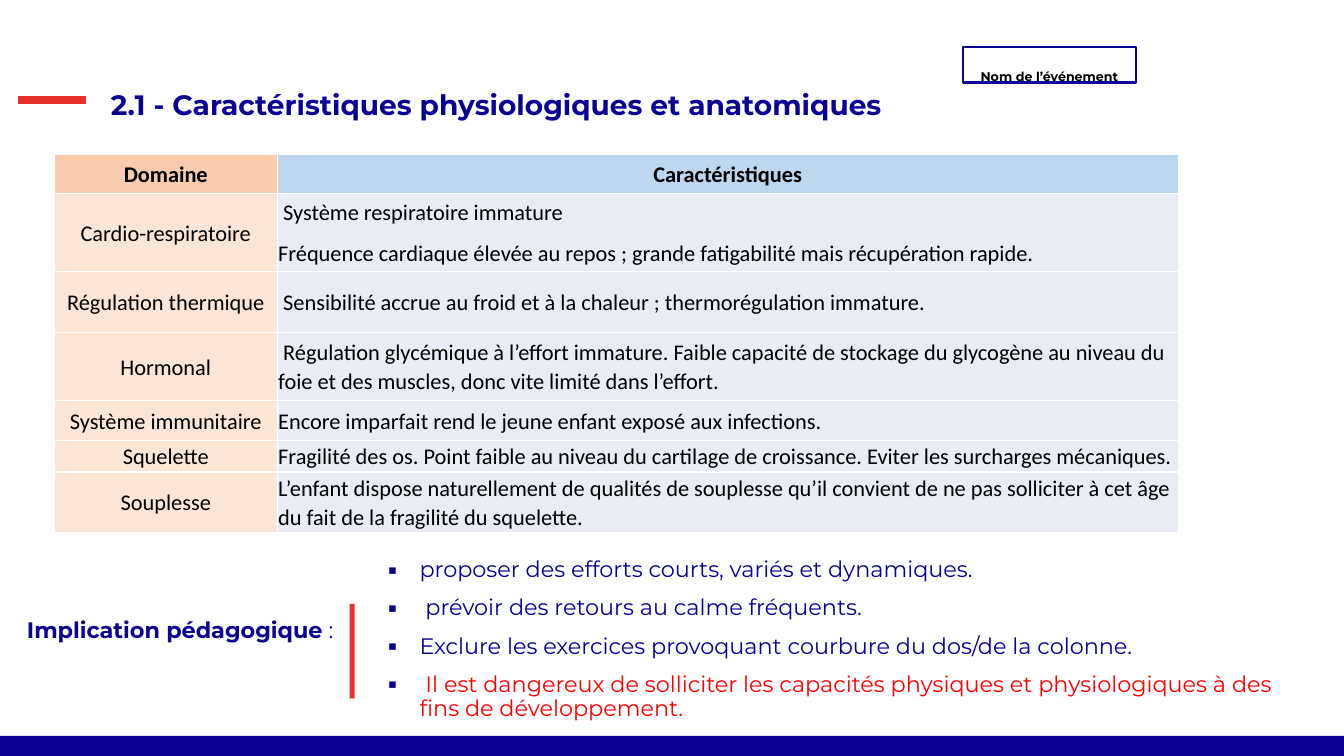
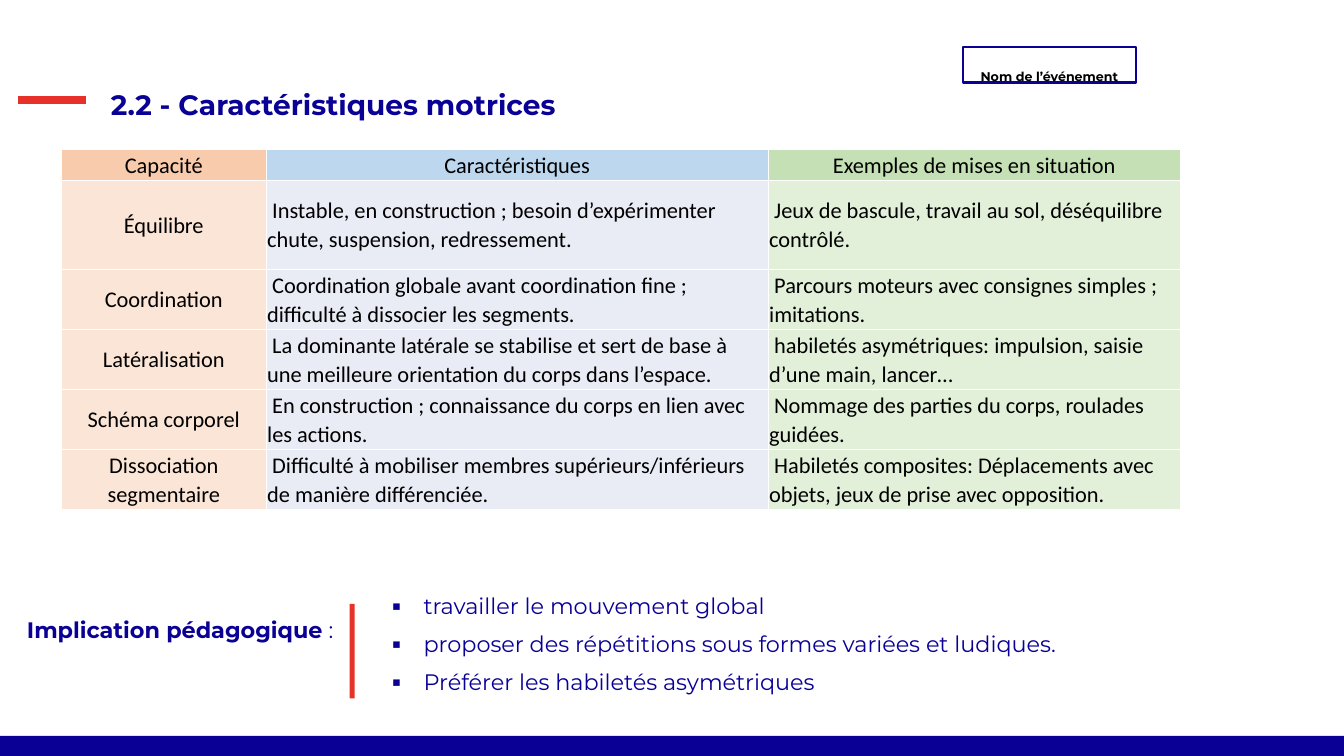
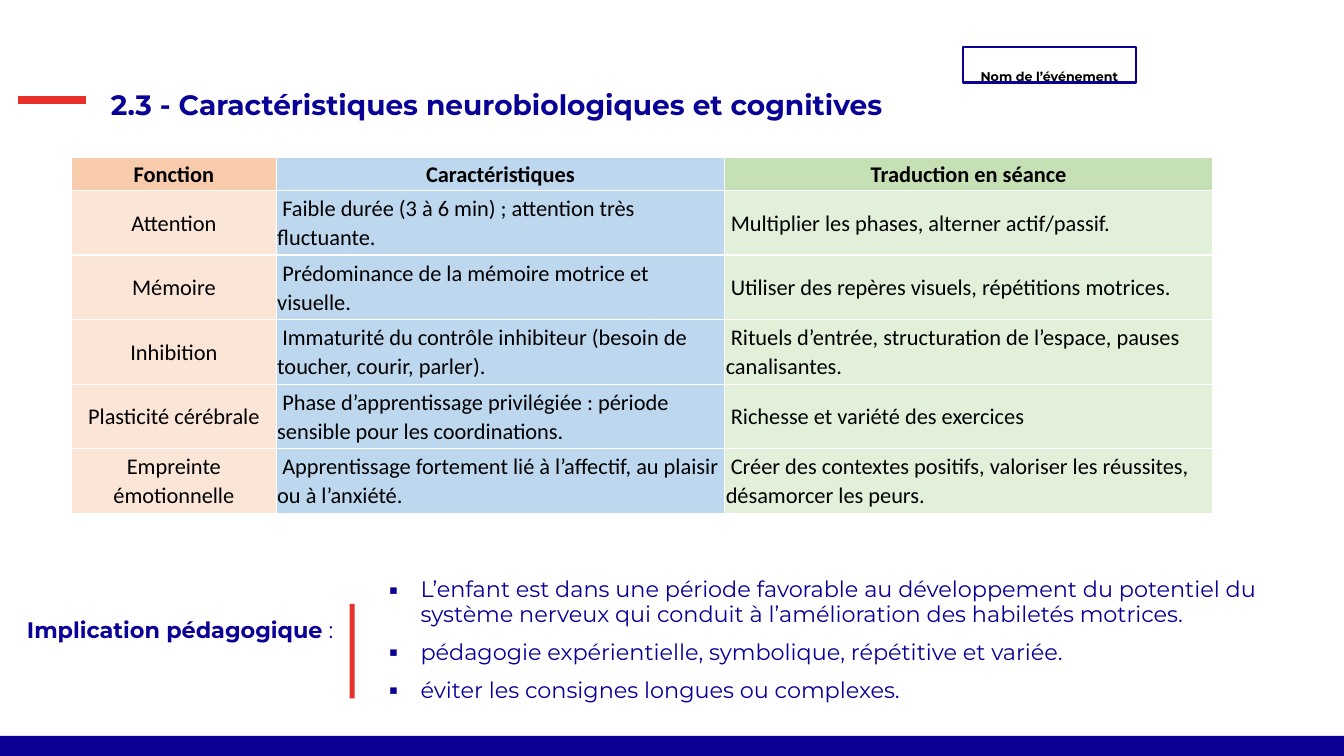
from dataclasses import dataclass
from itertools import product

from lxml import etree
from pptx import Presentation
from pptx.dml.color import RGBColor
from pptx.enum import shapes, text
from pptx.oxml import ns
from pptx.util import Pt


@dataclass(frozen=True)
class Theme:
    navy: str = "0A0096"
    title_navy: str = "090095"
    red: str = "E6332A"
    dash_red: str = "E7302A"
    alert: str = "FF0000"
    black: str = "000000"
    white: str = "FFFFFF"
    header_fills: tuple = ("F8CBAD", "BDD7EE", "C5E0B4")
    body_fills: tuple = ("FBE5D6", "E9EBF5", "E2F0D9")
    heading_font: str = "Montserrat"
    table_font: str = "Calibri"
    title_size: int = 20
    text_size: int = 16
    tag_size: int = 9


THEME = Theme()


def font_style(name, size, color, bold=False):
    return {"name": name, "size": Pt(size), "bold": bold, "color": color}


TITLE = font_style(THEME.heading_font, THEME.title_size, THEME.title_navy, True)
TEXT = font_style(THEME.heading_font, THEME.text_size, THEME.navy)
STRONG = {**TEXT, "bold": True}
ALERT = {**TEXT, "color": THEME.alert}
TAG = font_style(THEME.heading_font, THEME.tag_size, THEME.black, True)
CELL = font_style(THEME.table_font, THEME.text_size, THEME.black)
CELL_HEAD = {**CELL, "bold": True}

TIGHT = {"line_spacing": 0.9, "alignment": text.PP_ALIGN.LEFT}
CELL_LEFT = {"line_spacing": 1.06, "space_after": Pt(8)}
CELL_CENTER = {**CELL_LEFT, "alignment": text.PP_ALIGN.CENTER}
TAG_PARA = {"line_spacing": 2.5, "space_after": Pt(8), "alignment": text.PP_ALIGN.CENTER}

TOP_FRAME = {"word_wrap": True, "auto_size": text.MSO_AUTO_SIZE.NONE,
             "vertical_anchor": text.MSO_ANCHOR.TOP}
MARGINS = ("margin_left", "margin_top", "margin_right", "margin_bottom")


def rgb(value):
    return RGBColor.from_string(value)


def apply(target, values):
    for name, value in values.items():
        setattr(target, name, value)


def place(shape, box):
    apply(shape, dict(zip(("left", "top", "width", "height"), map(Pt, box))))


def write(frame, lines, para_format, gap=0):
    """Fill a frame; each line is a list of (text, font style) spans."""
    for index, spans in enumerate(lines):
        para = frame.paragraphs[0] if index == 0 else frame.add_paragraph()
        apply(para, para_format)
        para.space_before = Pt(gap if index else 0)
        for content, style in spans:
            span = para.add_run()
            span.text = content
            apply(span.font, {k: v for k, v in style.items() if k != "color"})
            span.font.color.rgb = rgb(style["color"])


def add_bullet(para, indent):
    props = para._p.get_or_add_pPr()
    props.set("marL", str(Pt(indent)))
    props.set("indent", str(-Pt(indent)))
    etree.SubElement(props, ns.qn("a:buFont")).set("typeface", THEME.heading_font)
    etree.SubElement(props, ns.qn("a:buChar")).set("char", "▪")


def add_rect(page, box, fill=None, line=None):
    rect = page.shapes.add_shape(shapes.MSO_SHAPE.RECTANGLE, *map(Pt, box))
    rect.shadow.inherit = False
    for part, color in ((rect.fill, fill), (rect.line.fill, line)):
        if color:
            part.solid()
            part.fore_color.rgb = rgb(color)
        else:
            part.background()
    return rect


def add_frame(page):
    """Draw what every slide shares: band, event tag, title dash, separator."""
    add_rect(page, (0, 525.6, 960, 14.4), fill=THEME.navy)
    add_rect(page, (249.8, 431.3, 3.6, 67.7), fill=THEME.red)

    tag = add_rect(page, (687.6, 33.8, 123.8, 25.2), line=THEME.navy)
    tag.line.width = Pt(1.5)
    apply(tag.text_frame, {**dict.fromkeys(MARGINS, 0), "word_wrap": True,
                           "vertical_anchor": text.MSO_ANCHOR.MIDDLE})
    write(tag.text_frame, [[("Nom de l’événement", TAG)]], TAG_PARA)

    dash = page.shapes.add_connector(
        shapes.MSO_CONNECTOR.STRAIGHT, Pt(13), Pt(71.3), Pt(61.2), Pt(71.3))
    dash.line.color.rgb = rgb(THEME.dash_red)
    dash.line.width = Pt(6)
    etree.SubElement(dash._element.spPr, ns.qn("a:effectLst"))


def add_title(page, title):
    place(page.shapes.title, (72, 61.9, 635, 35.3))
    frame = page.shapes.title.text_frame
    apply(frame, TOP_FRAME)
    write(frame, [[(title, TITLE)]], TIGHT)


def add_implications(page, box, lines):
    label = page.shapes.add_textbox(*map(Pt, (12.2, 438.5, 236.9, 35.3)))
    apply(label.text_frame, TOP_FRAME)
    write(label.text_frame, [[("Implication pédagogique", STRONG), (" :", TEXT)]], TIGHT)

    body = page.placeholders[1]
    place(body, box)
    apply(body.text_frame, TOP_FRAME)
    write(body.text_frame, lines, TIGHT, gap=10)
    for para in body.text_frame.paragraphs:
        add_bullet(para, 22.5)


def add_borders(cell):
    props = cell._tc.get_or_add_tcPr()
    for side in ("lnL", "lnR", "lnT", "lnB"):
        line = etree.SubElement(props, ns.qn(f"a:{side}"), w=str(Pt(1)))
        fill = etree.SubElement(line, ns.qn("a:solidFill"))
        etree.SubElement(fill, ns.qn("a:srgbClr"), val=THEME.white)


def add_grid(page, origin, widths, heights, rows, head_style, body_fills):
    size = (sum(widths), sum(heights))
    grid = page.shapes.add_table(len(rows), len(widths), *map(Pt, origin + size)).table
    apply(grid, {"first_row": False, "horz_banding": False})
    for column, width in zip(grid.columns, widths):
        column.width = Pt(width)
    for row, height in zip(grid.rows, heights):
        row.height = Pt(height)
    for r, c in product(range(len(rows)), range(len(widths))):
        cell = grid.cell(r, c)
        add_borders(cell)
        cell.fill.solid()
        cell.fill.fore_color.rgb = rgb((body_fills if r else THEME.header_fills)[c])
        apply(cell, {**dict.fromkeys(MARGINS, Pt(0.75)),
                     "vertical_anchor": text.MSO_ANCHOR.MIDDLE})
        style = CELL if r else head_style
        lines = [[(line, style)] for line in rows[r][c].split("\n")]
        write(cell.text_frame, lines, CELL_LEFT if r and c else CELL_CENTER)


def plain(*lines):
    return [[(line, TEXT)] for line in lines]


SLIDES = [
    {
        "title": "2.1 - Caractéristiques physiologiques et anatomiques",
        "grid": {
            "origin": (38.9, 110.2),
            "widths": (159.1, 643.7),
            "heights": (28.2, 55.4, 43.9, 48.7, 28.6, 22, 42.5),
            "head_style": CELL_HEAD,
            "body_fills": THEME.body_fills,
            "rows": [
                ("Domaine", "Caractéristiques"),
                ("Cardio-respiratoire",
                 " Système respiratoire immature\n"
                 "Fréquence cardiaque élevée au repos ; grande fatigabilité mais récupération rapide."),
                ("Régulation thermique",
                 " Sensibilité accrue au froid et à la chaleur ; thermorégulation immature."),
                ("Hormonal",
                 " Régulation glycémique à l’effort immature. Faible capacité de stockage du glycogène "
                 "au niveau du foie et des muscles, donc vite limité dans l’effort."),
                ("Système immunitaire",
                 "Encore imparfait rend le jeune enfant exposé aux infections."),
                ("Squelette",
                 "Fragilité des os. Point faible au niveau du cartilage de croissance. "
                 "Eviter les surcharges mécaniques."),
                ("Souplesse",
                 "L’enfant dispose naturellement de qualités de souplesse qu’il convient de ne pas "
                 "solliciter à cet âge du fait de la fragilité du squelette."),
            ],
        },
        "box": (270, 395.3, 678.2, 53.3),
        "lines": plain(
            "proposer des efforts courts, variés et dynamiques.",
            " prévoir des retours au calme fréquents.",
            "Exclure les exercices provoquant courbure du dos/de la colonne.",
        ) + [[(" ", TEXT),
              ("Il est dangereux de solliciter les capacités physiques et physiologiques "
               "à des fins de développement.", ALERT)]],
    },
    {
        "title": "2.2 - Caractéristiques motrices",
        "grid": {
            "origin": (43.9, 106.6),
            "widths": (146.2, 358.6, 294.5),
            "heights": (22.3, 63.4) + (42.5,) * 4,
            "head_style": CELL,
            "body_fills": THEME.body_fills,
            "rows": [
                ("Capacité", "Caractéristiques", "Exemples de mises en situation"),
                ("Équilibre",
                 " Instable, en construction ; besoin d’expérimenter chute, suspension, redressement.",
                 " Jeux de bascule, travail au sol, déséquilibre contrôlé."),
                ("Coordination",
                 " Coordination globale avant coordination fine ; difficulté à dissocier les segments.",
                 " Parcours moteurs avec consignes simples ; imitations."),
                ("Latéralisation",
                 " La dominante latérale se stabilise et sert de base à une meilleure orientation "
                 "du corps dans l’espace.",
                 " habiletés asymétriques: impulsion, saisie d’une main, lancer…"),
                ("Schéma corporel",
                 " En construction ; connaissance du corps en lien avec les actions.",
                 " Nommage des parties du corps, roulades guidées."),
                ("Dissociation segmentaire",
                 " Difficulté à mobiliser membres supérieurs/inférieurs de manière différenciée.",
                 " Habiletés composites: Déplacements avec objets, jeux de prise avec opposition."),
            ],
        },
        "box": (272.9, 421.2, 515.5, 53.3),
        "lines": plain(
            "travailler le mouvement global",
            "proposer des répétitions sous formes variées et ludiques.",
            "Préférer les habiletés asymétriques",
        ),
    },
    {
        "title": "2.3 - Caractéristiques neurobiologiques et cognitives",
        "grid": {
            "origin": (51.1, 112.3),
            "widths": (146.2, 320.4, 348.5),
            "heights": (23.8,) + (46.1,) * 5,
            "head_style": CELL_HEAD,
            "body_fills": (THEME.body_fills[0], THEME.header_fills[1], THEME.body_fills[2]),
            "rows": [
                ("Fonction", "Caractéristiques", "Traduction en séance"),
                ("Attention",
                 " Faible durée (3 à 6 min) ; attention très fluctuante.",
                 " Multiplier les phases, alterner actif/passif."),
                ("Mémoire",
                 " Prédominance de la mémoire motrice et visuelle.",
                 " Utiliser des repères visuels, répétitions motrices."),
                ("Inhibition",
                 " Immaturité du contrôle inhibiteur (besoin de toucher, courir, parler).",
                 " Rituels d’entrée, structuration de l’espace, pauses canalisantes."),
                ("Plasticité cérébrale",
                 " Phase d’apprentissage privilégiée : période sensible pour les coordinations.",
                 " Richesse et variété des exercices"),
                ("Empreinte émotionnelle",
                 " Apprentissage fortement lié à l’affectif, au plaisir ou à l’anxiété.",
                 " Créer des contextes positifs, valoriser les réussites, désamorcer les peurs."),
            ],
        },
        "box": (270.7, 409.7, 668.9, 93.6),
        "lines": plain(
            "L’enfant est dans une période favorable au développement du potentiel du système "
            "nerveux qui conduit à l’amélioration des habiletés motrices.",
            "pédagogie expérientielle, symbolique, répétitive et variée.",
            "éviter les consignes longues ou complexes.",
        ),
    },
]


def main():
    deck = Presentation()
    apply(deck, {"slide_width": Pt(960), "slide_height": Pt(540)})
    for content in SLIDES:
        page = deck.slides.add_slide(deck.slide_layouts[1])
        add_frame(page)
        add_title(page, content["title"])
        add_grid(page, **content["grid"])
        add_implications(page, content["box"], content["lines"])
    deck.save("out.pptx")


if __name__ == "__main__":
    main()
